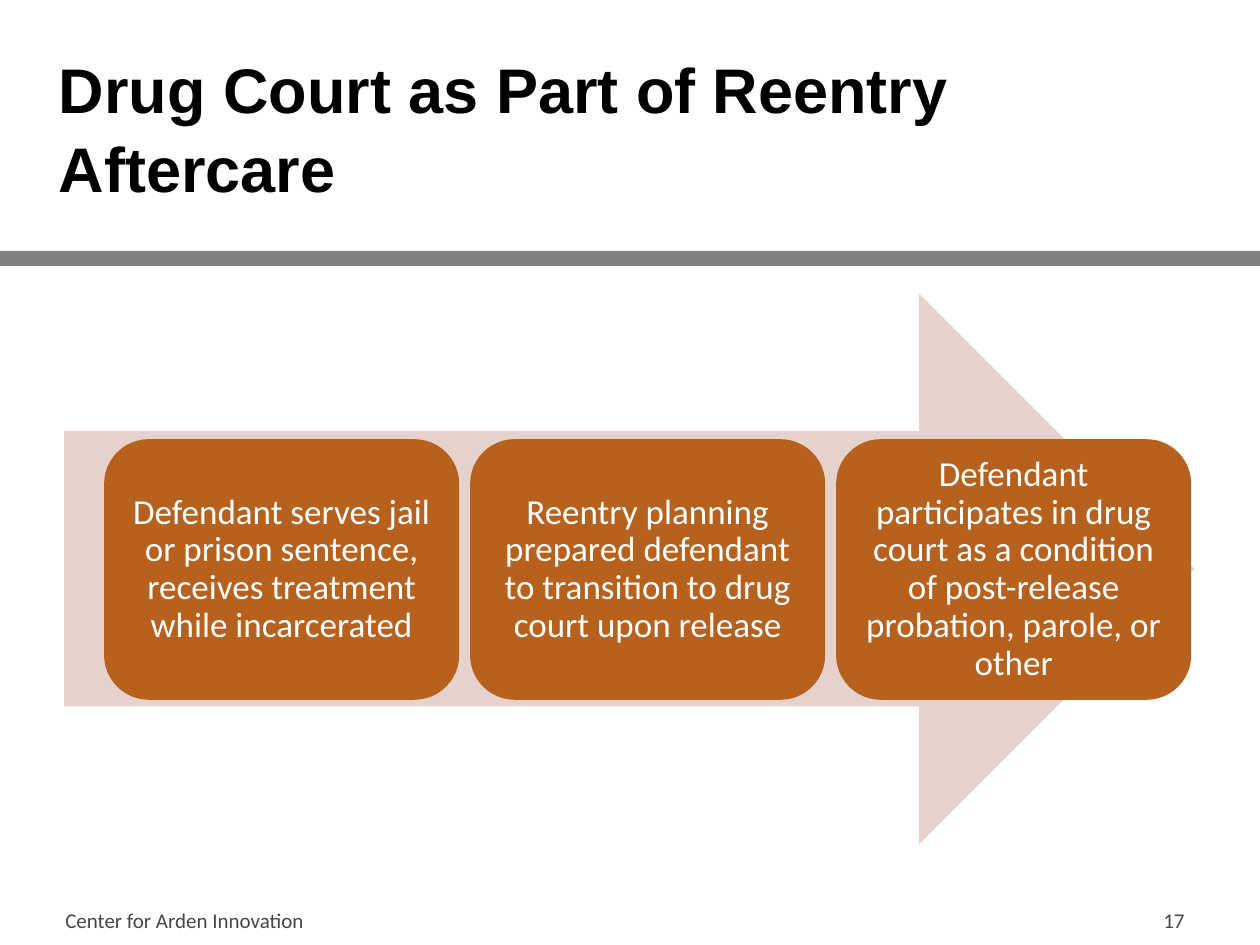
from pptx import Presentation
from pptx import util as u
from pptx.dml.color import RGBColor
from pptx.enum import shapes, text

COLS, ROWS = 100, 75  # grid of 0.1 inch cells


def rgb(value):
    return RGBColor.from_string(value)


class Deck:
    """Holds the style and the current slide."""
    body = dict(name="Calibri", size=u.Pt(20), bold=False)
    small = dict(name="Calibri", size=u.Pt(12), bold=False)
    heading = dict(name="Arial", size=u.Pt(36), bold=True)

    def __init__(self):
        self.prs = Presentation()
        self.prs.slide_width, self.prs.slide_height = u.Inches(10), u.Inches(7.5)
        self.s = self.prs.slides.add_slide(self.prs.slide_layouts[6])

    def place(self, col, row, cols, rows):
        dx, dy = self.prs.slide_width / COLS, self.prs.slide_height / ROWS
        return [int(v) for v in (col * dx, row * dy, cols * dx, rows * dy)]

    def shape(self, kind, at, fill, line=None):
        sp = self.s.shapes.add_shape(kind, *self.place(*at))
        sp.shadow.inherit = False
        sp.fill.solid()
        sp.fill.fore_color.rgb = rgb(fill)
        if line:
            sp.line.color.rgb = rgb(fill)
            sp.line.width = u.Pt(line)
        else:
            sp.line.fill.background()
        return sp

    def set_text(self, sp, words, font, color, anchor=text.MSO_ANCHOR.MIDDLE,
                 align=text.PP_ALIGN.LEFT, spacing=1.0, inset=None):
        tf = sp.text_frame
        tf.word_wrap = True
        tf.vertical_anchor = anchor
        if inset is not None:
            for side in ("left", "right", "top", "bottom"):
                setattr(tf, f"margin_{side}", u.Inches(inset))
        p = tf.paragraphs[0]
        p.alignment, p.line_spacing = align, spacing
        r = p.add_run()
        r.text = words
        for key, value in font.items():
            setattr(r.font, key, value)
        r.font.color.rgb = rgb(color)

    def label(self, at, words, font, color, **layout):
        sp = self.s.shapes.add_textbox(*self.place(*at))
        self.set_text(sp, words, font, color, **layout)


def main():
    d = Deck()

    # Title and divider
    d.shape(shapes.MSO_SHAPE.RECTANGLE, (0, 19.9, COLS, 1.2), "808080")
    d.label((3.7, 3.2, 92.6, 14.5), "Drug Court as Part of Reentry Aftercare",
            d.heading, "000000", anchor=text.MSO_ANCHOR.TOP, spacing=1.05)

    # Process arrow with its steps
    d.shape(shapes.MSO_SHAPE.RIGHT_ARROW, (5.1, 23.3, 89.7, 43.7), "E5D2CD")
    steps = [
        "Defendant serves jail or prison sentence, receives treatment while incarcerated",
        "Reentry planning prepared defendant to transition to drug court upon release",
        "Defendant participates in drug court as a condition of post-release "
        "probation, parole, or other",
    ]
    for i, step in enumerate(steps):
        box = d.shape(shapes.MSO_SHAPE.ROUNDED_RECTANGLE,
                      (8.4 + i * 29.05, 35, 27.9, 20.4), "B6611E", line=2)
        d.set_text(box, step, d.body, "FFFFFF", align=text.PP_ALIGN.CENTER,
                   spacing=0.9, inset=0.08)

    # Footer
    d.label((71.7, 71, 23.3, 4), "17", d.small, "464646", align=text.PP_ALIGN.RIGHT)
    d.label((4.2, 71, 31.7, 4), "Center for Arden Innovation", d.small, "464646")

    d.prs.save("out.pptx")


if __name__ == "__main__":
    main()
